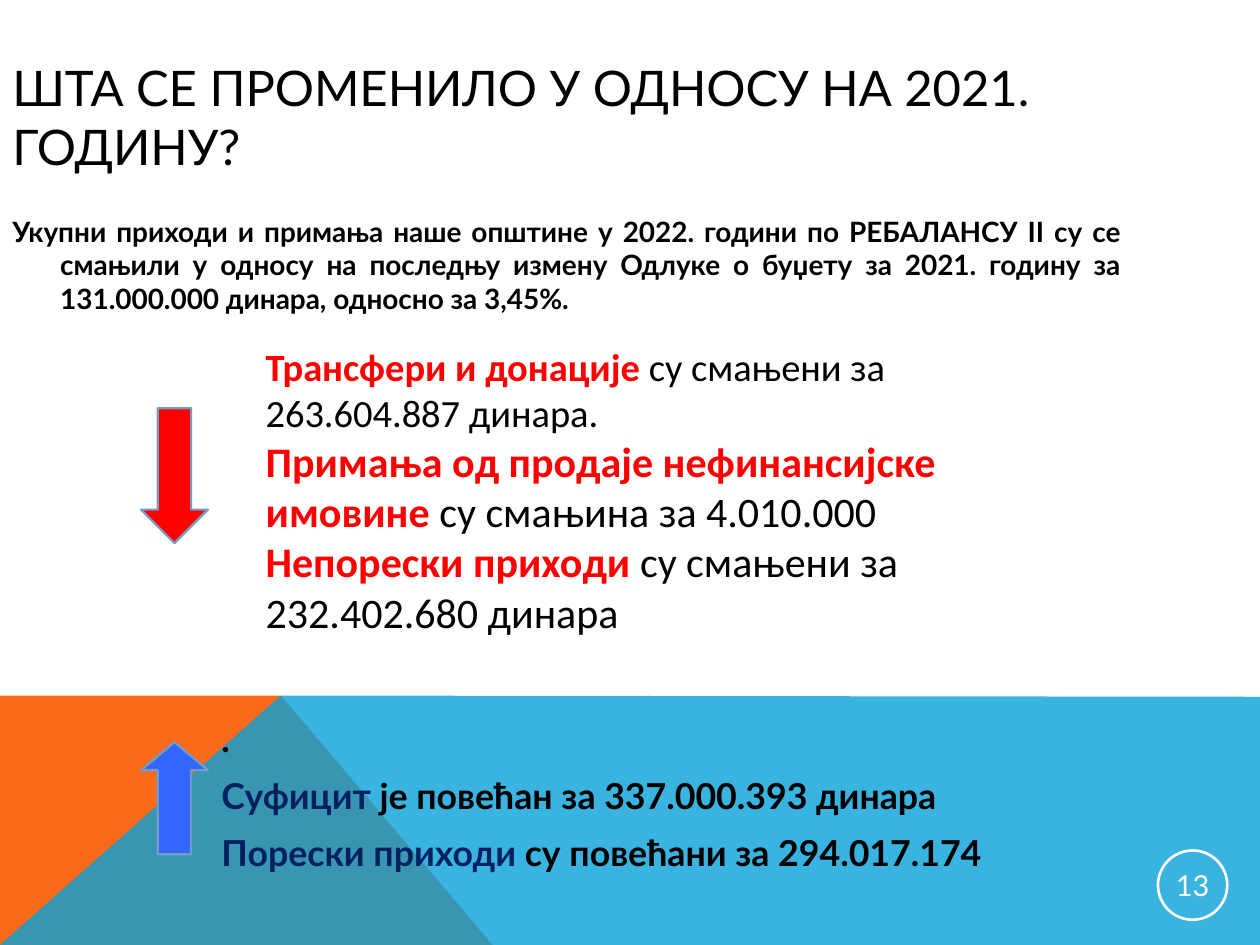
from pptx import Presentation
from pptx.util import Inches, Pt
from pptx.dml.color import RGBColor
from pptx.enum.shapes import MSO_SHAPE as Kind
from pptx.enum.text import PP_ALIGN as Align, MSO_ANCHOR as Anchor
from pptx.oxml.ns import qn
from lxml.etree import SubElement

BLACK, RED, NAVY, WHITE = "000000", "FF0000", "002060", "FFFFFF"


def paint(target, color):
    if hasattr(target, "solid"):
        target.solid()
        target.fore_color.rgb = RGBColor.from_string(color)
    else:
        target.rgb = RGBColor.from_string(color)


def write(area, rows, font="Lato", before=0):
    frame = slide.shapes.add_textbox(*map(Inches, area)).text_frame
    frame.word_wrap = True
    for i, row in enumerate(rows):
        para = frame.paragraphs[0] if i == 0 else frame.add_paragraph()
        para.space_before = Pt(before)
        for text, size, color, bold in row:
            run = para.add_run()
            run.text = text
            run.font.name = font
            run.font.size = Pt(size)
            run.font.bold = bold
            paint(run.font.color, color)
    return frame


deck = Presentation()
deck.slide_width, deck.slide_height = Inches(10), Inches(7.5)
slide = deck.slides.add_slide(deck.slide_layouts[6])

bands = [
    ("F96A1B", None, [(0, 7.5), (0, 5.52), (2.23, 5.52), (3.91, 7.5)]),
    ("08A1D9", 80, [(0, 7.5), (2.23, 5.52), (10, 5.53), (10, 7.5)]),
]
for color, alpha, points in bands:
    dots = [(Inches(x), Inches(y)) for x, y in points]
    pen = slide.shapes.build_freeform(*dots[0])
    pen.add_line_segments(dots[1:], close=True)
    band = pen.convert_to_shape()
    band.shadow.inherit = False
    band.line.fill.background()
    paint(band.fill, color)
    if alpha:
        tone = band.fill._xPr.find(qn("a:solidFill"))[0]
        SubElement(tone, qn("a:alpha")).set("val", str(alpha * 1000))

badge = slide.shapes.add_shape(Kind.OVAL, Inches(9.19), Inches(6.75), Inches(0.55), Inches(0.55))
badge.shadow.inherit = False
badge.fill.background()
paint(badge.line.fill, WHITE)
badge.line.width = Pt(1.5)
frame = badge.text_frame
frame.margin_left = frame.margin_right = Inches(0.01)
frame.margin_top = frame.margin_bottom = Inches(0.01)
frame.vertical_anchor = Anchor.MIDDLE
frame.text = "13"
para = frame.paragraphs[0]
para.alignment = Align.CENTER
font = para.runs[0].font
font.name, font.size = "Lato", Pt(16.5)
paint(font.color, WHITE)

title = write((0, 0.3, 8.73, 1.25), [
    [("ШТА СЕ ПРОМЕНИЛО У ОДНОСУ НА 2021. ГОДИНУ?", 28, BLACK, False)],
])
title.vertical_anchor = Anchor.MIDDLE

intro = write((0, 1.65, 9, 1.24), [
    [("Укупни приходи и примања наше општине у 2022. години по РЕБАЛАНСУ II су се "
      "смањили у односу на последњу измену Одлуке о буџету за 2021. годину за "
      "131.000.000 динара, односно за 3,45%.", 16, BLACK, True)],
], before=8)
para = intro.paragraphs[0]
para.alignment = Align.JUSTIFY
props = para._p.get_or_add_pPr()
props.set("marL", str(Inches(0.38)))
props.set("indent", str(Inches(-0.38)))

write((1.66, 5.64, 8.34, 1.14), [
    [(".", 20.4, BLACK, True)],
    [("Суфицит", 20.4, NAVY, True), (" је повећан за 337.000.393 динара", 20.4, BLACK, True)],
    [("Порески приходи ", 20.4, NAVY, True), ("су повећани за 294.017.174", 20.4, BLACK, True)],
], before=8)

drops = write((2.01, 2.33, 6.69, 1.18), [
    [("Трансфери и донације ", 22, RED, True),
     ("су смањени за 263.604.887 динара.", 22, BLACK, False)],
    [("Примања од продаје нефинансијске имовине", 24, RED, True),
     (" су смањина за 4.010.000", 24, BLACK, False)],
    [("Непорески приходи ", 24, RED, True),
     ("су смањени за 232.402.680 динара", 24, BLACK, False)],
], font="Calibri")
drops.margin_top = Inches(0.39)

arrows = [
    (Kind.DOWN_ARROW, 3.24, 1.07, 0.5, RED),
    (Kind.UP_ARROW, 5.89, 0.89, 0.42, "3366FF"),
]
for kind, top, height, head, color in arrows:
    arrow = slide.shapes.add_shape(kind, Inches(1.12), Inches(top), Inches(0.53), Inches(height))
    arrow.shadow.inherit = False
    arrow.adjustments[0] = 0.5
    arrow.adjustments[1] = head
    paint(arrow.fill, color)
    paint(arrow.line.fill, "739CC3")
    arrow.line.width = Pt(1.25)

deck.save("out.pptx")
